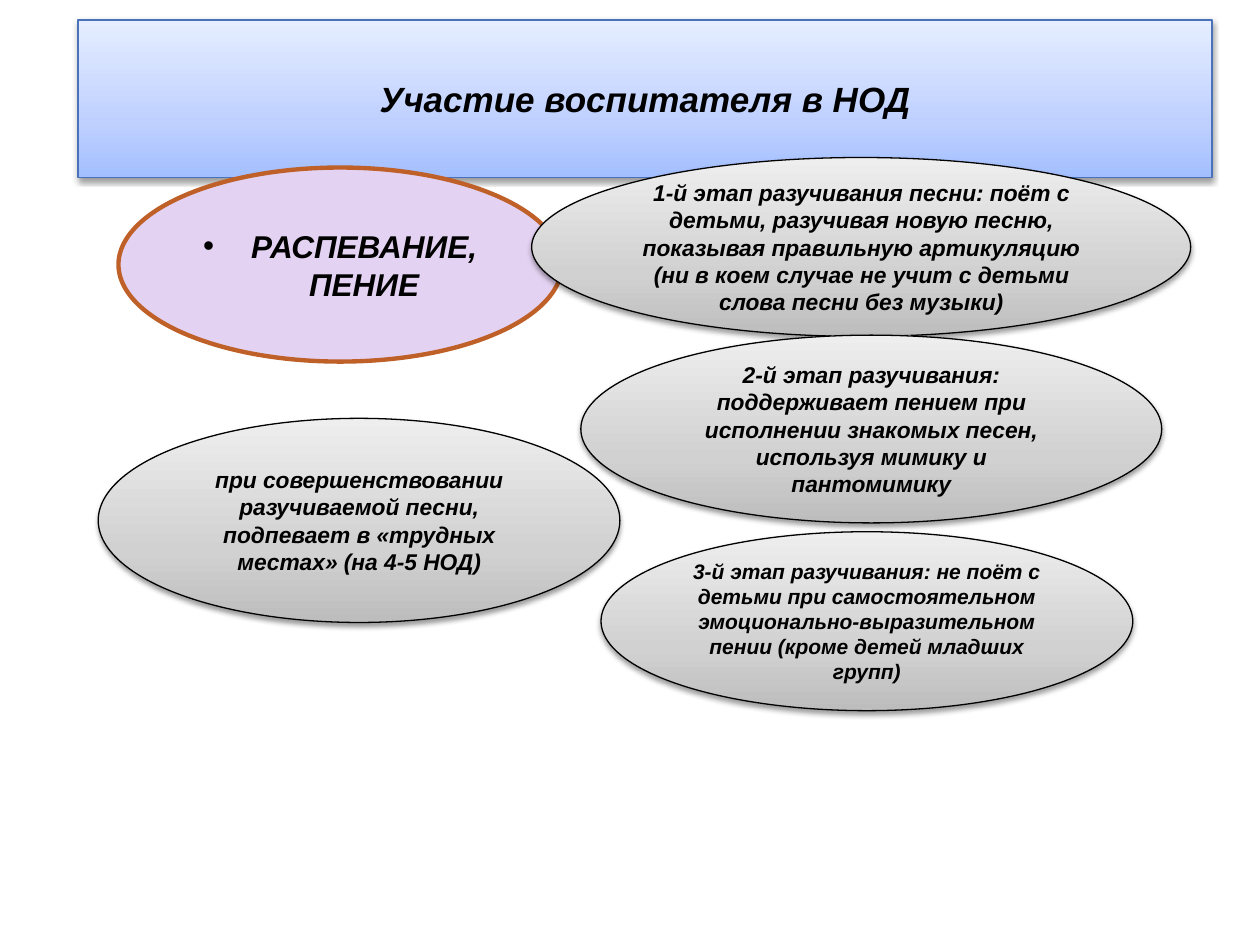
from copy import deepcopy
from dataclasses import dataclass

from lxml import etree
from pptx import Presentation
from pptx import util as u
from pptx.dml.color import RGBColor
from pptx.enum import shapes, text
from pptx.oxml import ns


@dataclass(frozen=True)
class Theme:
    font: str = "Arial"
    ink: str = "000000"
    title_stops: tuple = ((0, "A3BFFF"), (0.35, "BFD0FF"), (1, "E5EEFF"))
    title_line: str = "4A72BB"
    stage_stops: tuple = ((0, "BDBDBD"), (0.35, "D1D1D1"), (1, "EEEEEE"))
    topic_fill: str = "E4D2F2"
    topic_line: str = "BE6028"
    title_size: int = 20
    topic_size: int = 18
    stage_size: int = 13
    small_size: int = 12


THEME = Theme()

STAGES = (
    ((4.22, 1.25, 5.23, 1.42), THEME.stage_size,
     "1-й этап разучивания песни: поёт с детьми, разучивая новую песню, "
     "показывая правильную артикуляцию (ни в коем случае не учит с детьми "
     "слова песни без музыки)"),
    ((4.61, 2.66, 4.61, 1.49), THEME.stage_size,
     "2-й этап разучивания: поддерживает пением при исполнении знакомых "
     "песен, используя мимику и пантомимику"),
    ((4.77, 4.22, 4.22, 1.42), THEME.small_size,
     "3-й этап разучивания: не поёт с детьми при самостоятельном "
     "эмоционально-выразительном пении (кроме детей младших групп)"),
    ((0.78, 3.32, 4.14, 1.62), THEME.stage_size,
     "при совершенствовании разучиваемой песни, подпевает в «трудных "
     "местах» (на 4-5 НОД)"),
)


def place(sp, box):
    sp.left, sp.top, sp.width, sp.height = map(u.Inches, box)


def outline(sp, color, width):
    sp.line.color.rgb = RGBColor.from_string(color)
    sp.line.width = u.Pt(width)


def fill_gradient(sp, stops):
    sp.fill.gradient()
    sp.fill.gradient_angle = 90
    gs_list = sp._element.spPr.find(".//" + ns.qn("a:gsLst"))
    gs_list.insert(1, deepcopy(gs_list[0]))
    for stop, (position, color) in zip(sp.fill.gradient_stops, stops):
        stop.position = position
        stop.color.rgb = RGBColor.from_string(color)


def add_shadow(sp):
    sp.shadow.inherit = False
    effects = sp._element.spPr.find(ns.qn("a:effectLst"))
    shadow = etree.SubElement(
        effects, ns.qn("a:outerShdw"), blurRad=str(u.Pt(3.1)),
        dist=str(u.Pt(1.6)), dir="5400000", rotWithShape="0")
    color = etree.SubElement(shadow, ns.qn("a:srgbClr"), val=THEME.ink)
    etree.SubElement(color, ns.qn("a:alpha"), val="38000")


def write(sp, words, size):
    tf = sp.text_frame
    tf.word_wrap = True
    tf.auto_size = text.MSO_AUTO_SIZE.NONE
    tf.vertical_anchor = text.MSO_ANCHOR.MIDDLE
    p = tf.paragraphs[0]
    p.alignment = text.PP_ALIGN.CENTER
    p.space_before = u.Pt(0)
    r = p.add_run()
    r.text = words
    r.font.name = THEME.font
    r.font.size = u.Pt(size)
    r.font.bold = r.font.italic = True
    r.font.color.rgb = RGBColor.from_string(THEME.ink)
    return p


def title_banner(s, box):
    sp = s.shapes.title
    place(sp, box)
    fill_gradient(sp, THEME.title_stops)
    outline(sp, THEME.title_line, 0.75)
    add_shadow(sp)
    write(sp, "Участие воспитателя в НОД", THEME.title_size)


def topic_oval(s, box):
    sp = s.placeholders[1]
    place(sp, box)
    geom = etree.Element(ns.qn("a:prstGeom"), prst="ellipse")
    etree.SubElement(geom, ns.qn("a:avLst"))
    sp._element.spPr.find(ns.qn("a:xfrm")).addnext(geom)
    sp.fill.solid()
    sp.fill.fore_color.rgb = RGBColor.from_string(THEME.topic_fill)
    outline(sp, THEME.topic_line, 2.5)
    p = write(sp, "РАСПЕВАНИЕ, ПЕНИЕ", THEME.topic_size)
    pPr = p._p.get_or_add_pPr()
    indent = u.Inches(0.38)
    pPr.set("marL", str(indent))
    pPr.set("indent", str(-indent))
    etree.SubElement(pPr, ns.qn("a:buFont"), typeface=THEME.font)
    etree.SubElement(pPr, ns.qn("a:buChar"), char="•")


def stage_oval(s, box, size, words):
    sp = s.shapes.add_shape(shapes.MSO_SHAPE.OVAL, *map(u.Inches, box))
    fill_gradient(sp, THEME.stage_stops)
    outline(sp, THEME.ink, 0.75)
    add_shadow(sp)
    write(sp, words, size)


def main():
    prs = Presentation()
    prs.slide_width, prs.slide_height = u.Inches(10), u.Inches(7.5)
    s = prs.slides.add_slide(prs.slide_layouts[1])
    title_banner(s, (0.62, 0.16, 9, 1.25))
    topic_oval(s, (0.94, 1.33, 3.52, 1.54))
    for box, size, words in STAGES:
        stage_oval(s, box, size, words)
    prs.save("out.pptx")


if __name__ == "__main__":
    main()
